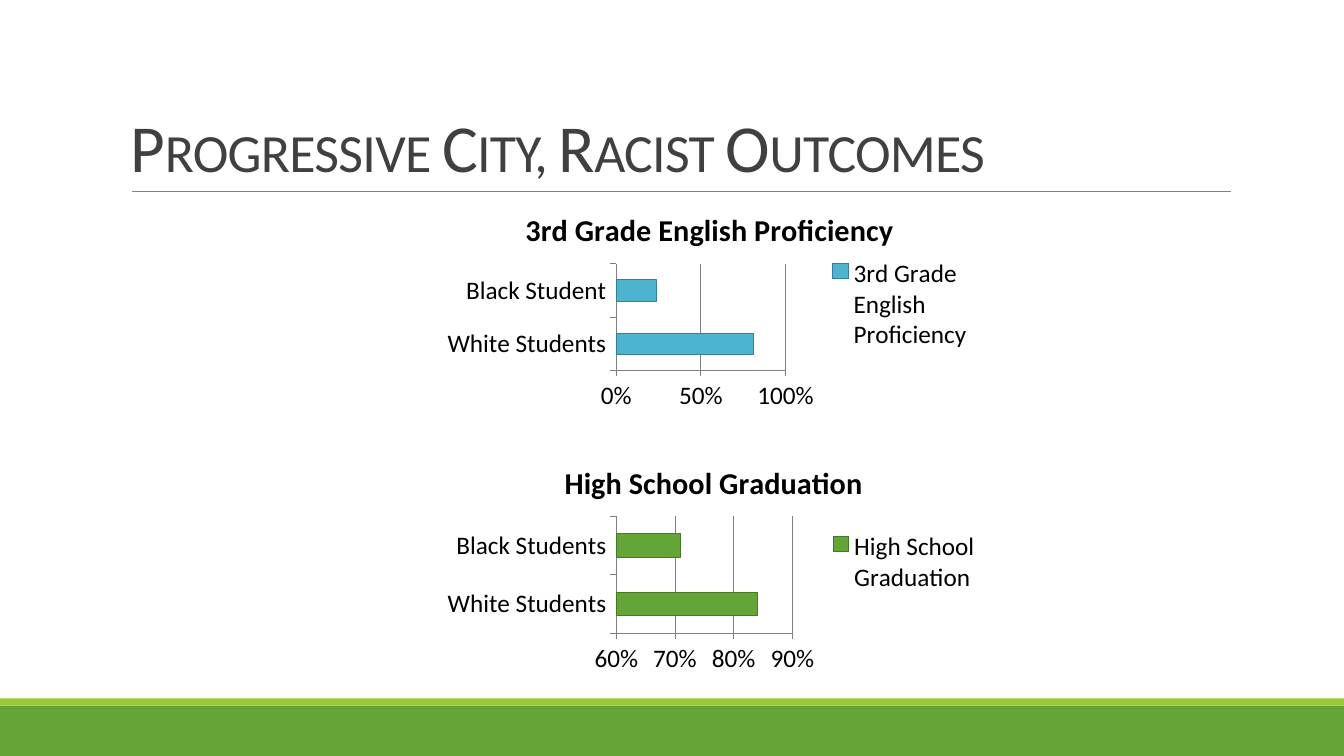
import pptx
import pptx.chart.data
import pptx.dml.color
import pptx.enum.chart
import pptx.enum.shapes
import pptx.enum.text
import pptx.oxml
import pptx.util

Inches = pptx.util.Inches
Pt = pptx.util.Pt
RGBColor = pptx.dml.color.RGBColor

# Colours
GREEN = RGBColor(0x63, 0xA5, 0x37)
MOSS = RGBColor(0x47, 0x79, 0x27)
LIME = RGBColor(0x99, 0xCB, 0x38)
BLUE = RGBColor(0x4E, 0xB3, 0xCF)
TEAL = RGBColor(0x36, 0x80, 0x95)
GRAY = RGBColor(0x80, 0x80, 0x80)
DARK = RGBColor(0x40, 0x40, 0x40)
BLACK = RGBColor(0, 0, 0)
FONT = "Calibri"

# Content
TITLE = "Progressive City, Racist Outcomes"
BANDS = [((0, 7, 13.33, 0.5), GREEN), ((0, 6.93, 13.33, 0.07), LIME)]
CHARTS = [
    {"name": "3rd Grade English Proficiency", "at": (4.33, 1.92, 5.42, 2.2),
     "data": {"White Students": 0.81, "Black Student": 0.24},
     "scale": (0, 1, 0.5), "fill": BLUE, "edge": TEAL},
    {"name": "High School Graduation", "at": (4.33, 4.42, 5.5, 2.31),
     "data": {"White Students": 0.84, "Black Students": 0.71},
     "scale": (0.6, 0.9, 0.1), "fill": GREEN, "edge": MOSS},
]


def put_text(frame, text, size=18, color=BLACK, bold=False, caps=False,
             track=0, space=None):
    para = frame.paragraphs[0]
    if space:
        para.line_spacing = space
    run = para.add_run()
    run.text = text
    set_font(run.font, size, color, bold)
    props = run._r.get_or_add_rPr()
    if caps:
        props.set("cap", "small")
    if track:
        props.set("spc", str(int(track * 100)))


def set_font(font, size, color, bold=False):
    font.name = FONT
    font.size = Pt(size)
    font.bold = bold
    font.color.rgb = color


def set_line(line, color, width=0.75):
    line.color.rgb = color
    line.width = Pt(width)


def add_bars(slide, item):
    data = pptx.chart.data.CategoryChartData(number_format="0%")
    data.categories = list(item["data"])
    data.add_series(item["name"], list(item["data"].values()))
    chart = slide.shapes.add_chart(
        pptx.enum.chart.XL_CHART_TYPE.BAR_CLUSTERED,
        *map(Inches, item["at"]), data).chart
    set_font(chart.font, 18, BLACK)
    chart.has_title = True
    put_text(chart.chart_title.text_frame, item["name"], size=21.6, bold=True)
    chart.chart_title.include_in_layout = False
    chart.has_legend = True
    chart.legend.position = pptx.enum.chart.XL_LEGEND_POSITION.RIGHT
    chart.legend.include_in_layout = False

    # Bars
    plot = chart.plots[0]
    plot.gap_width = 150
    plot.vary_by_categories = False
    bars = plot.series[0].format
    bars.fill.solid()
    bars.fill.fore_color.rgb = item["fill"]
    set_line(bars.line, item["edge"])

    # Axes
    axis = chart.value_axis
    axis.minimum_scale, axis.maximum_scale, axis.major_unit = item["scale"]
    axis.has_major_gridlines = True
    set_line(axis.major_gridlines.format.line, GRAY)
    axis.tick_labels.number_format = "0%"
    axis.tick_labels.number_format_is_linked = False
    for each in (axis, chart.category_axis):
        each.major_tick_mark = pptx.enum.chart.XL_TICK_MARK.OUTSIDE
        set_line(each.format.line, GRAY)


deck = pptx.Presentation()
deck.slide_width, deck.slide_height = Inches(13.33), Inches(7.5)
slide = deck.slides.add_slide(deck.slide_layouts[6])

# Bottom bands
for place, color in BANDS:
    band = slide.shapes.add_shape(
        pptx.enum.shapes.MSO_SHAPE.RECTANGLE, *map(Inches, place))
    band.shadow.inherit = False
    band.fill.solid()
    band.fill.fore_color.rgb = color
    band.line.fill.background()

# Title and its rule
rule = slide.shapes.add_connector(
    pptx.enum.shapes.MSO_CONNECTOR.STRAIGHT,
    *map(Inches, (1.31, 1.9, 12.21, 1.9)))
set_line(rule.line, GRAY, 0.5)
rule._element.spPr.append(pptx.oxml.parse_xml(
    '<a:effectLst xmlns:a='
    '"http://schemas.openxmlformats.org/drawingml/2006/main"/>'))
frame = slide.shapes.add_textbox(
    *map(Inches, (1.2, 0.31, 11, 1.59))).text_frame
frame.word_wrap = True
frame.vertical_anchor = pptx.enum.text.MSO_ANCHOR.BOTTOM
put_text(frame, TITLE, size=48, color=DARK, caps=True, track=-0.5, space=0.85)

# Charts
for item in CHARTS:
    add_bars(slide, item)

deck.save("out.pptx")
